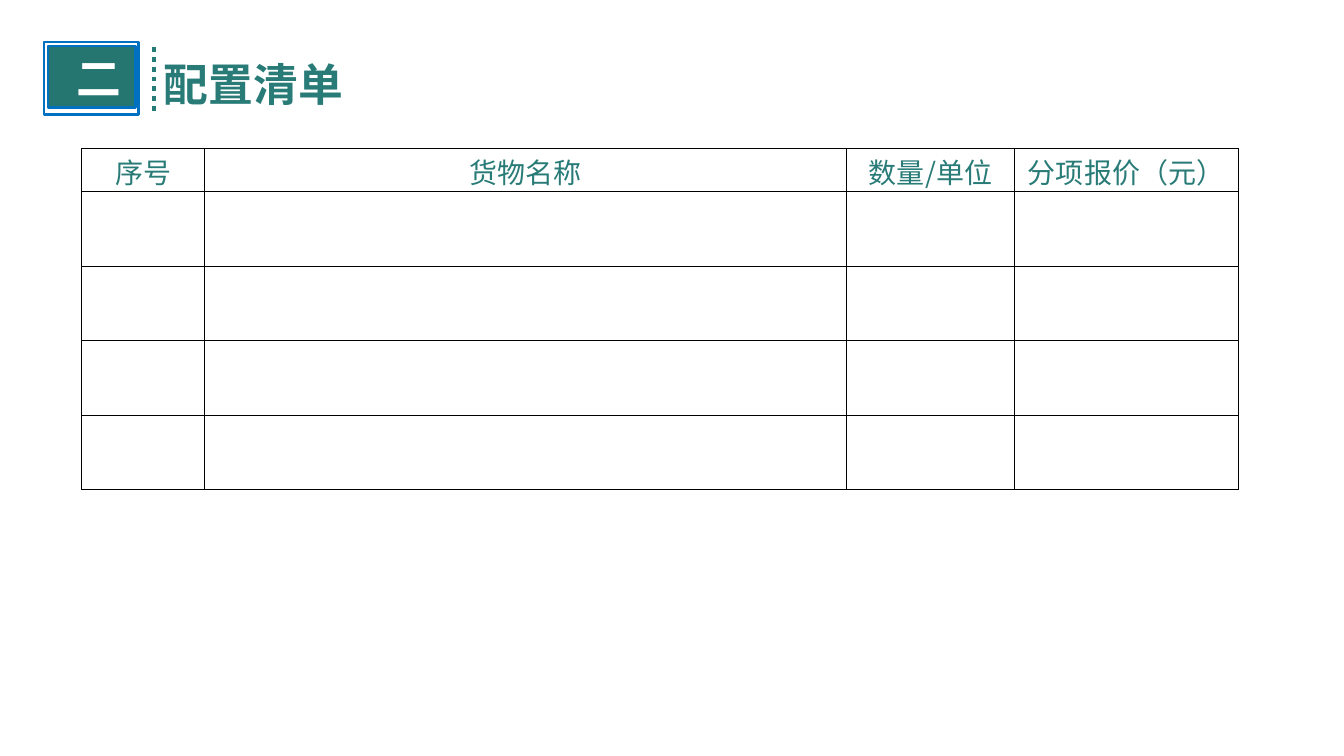
import pptx
import pptx.util
import pptx.dml.color
import pptx.enum.dml
import pptx.enum.shapes
import pptx.enum.text
import pptx.oxml
import pptx.oxml.ns
from lxml import etree

Cm, Pt = pptx.util.Cm, pptx.util.Pt
FONT = "Noto Sans CJK SC"
TEAL, BLUE, WHITE, BLACK = "297B77", "0070C0", "FFFFFF", "000000"
NO_STYLE = "{2D5ABB26-0587-4C30-8999-92F81FD0307C}"


def rgb(value):
    return pptx.dml.color.RGBColor.from_string(value)


def add_child(parent, tag, **attrs):
    return etree.SubElement(parent, pptx.oxml.ns.qn(tag), attrs)


def write(p, text, color, **font):
    r = p.add_run()
    r.text = text
    for name, value in {"name": FONT, **font}.items():
        setattr(r.font, name, value)
    r.font.color.rgb = rgb(color)
    add_child(r.font._element, "a:ea", typeface=FONT)


def add_heading(s, text, color, left, top, width, height):
    tf = s.shapes.add_textbox(Cm(left), Cm(top), Cm(width), Cm(height)).text_frame
    tf.word_wrap = True
    tf.vertical_anchor = pptx.enum.text.MSO_ANCHOR.MIDDLE
    write(tf.paragraphs[0], text, color, size=Pt(32), bold=True)


def add_panel(s, fill, left, top, width, height):
    sp = s.shapes.add_shape(pptx.enum.shapes.MSO_SHAPE.RECTANGLE,
                            Cm(left), Cm(top), Cm(width), Cm(height))
    sp.shadow.inherit = False
    sp.fill.solid()
    sp.fill.fore_color.rgb = rgb(fill)
    sp.line.color.rgb = rgb(BLUE)
    sp.line.width = Pt(2)


def add_title(s, number, title, left, top):
    """Numbered badge, dotted divider and section title."""
    add_panel(s, WHITE, left, top, 2.39, 1.83)
    add_panel(s, "257570", left + 0.1, top + 0.1, 2.21, 1.55)
    add_heading(s, number, WHITE, left + 0.56, top + 0.08, 1.75, 1.63)
    add_heading(s, title, TEAL, left + 2.77, top + 0.23, 11, 1.63)
    x = Cm(left + 2.77)
    divider = s.shapes.add_connector(pptx.enum.shapes.MSO_CONNECTOR.STRAIGHT,
                                     x, Cm(top + 0.13), x, Cm(top + 1.85))
    divider.line.color.rgb = rgb("267B76")
    divider.line.width = Pt(3.5)
    divider.line.dash_style = pptx.enum.dml.MSO_LINE.ROUND_DOT
    add_child(divider._element.spPr, "a:effectLst")


def add_borders(cell):
    tcPr = cell._tc.get_or_add_tcPr()
    for i, side in enumerate(("a:lnL", "a:lnR", "a:lnT", "a:lnB")):
        ln = pptx.oxml.parse_xml(
            f'<{side} {pptx.oxml.ns.nsdecls("a")} w="{Pt(0.5)}"><a:solidFill>'
            f'<a:srgbClr val="{BLACK}"/></a:solidFill></{side}>')
        tcPr.insert(i, ln)


def add_price_table(s, headers, widths, heights, left, top):
    table = s.shapes.add_table(len(heights), len(widths), Cm(left), Cm(top),
                               Cm(sum(widths)), Cm(sum(heights))).table
    table._tbl.tblPr.find(pptx.oxml.ns.qn("a:tableStyleId")).text = NO_STYLE
    table.first_row = table.horz_banding = False
    for column, width in zip(table.columns, widths):
        column.width = Cm(width)
    for row, height in zip(table.rows, heights):
        row.height = Cm(height)
    for cell in table.iter_cells():
        cell.fill.background()
        add_borders(cell)
    for cell, text in zip(table.rows[0].cells, headers):
        for name, value in {"margin_left": 0, "margin_right": 0,
                            "margin_top": Cm(0.06), "margin_bottom": 0}.items():
            setattr(cell, name, value)
        p = cell.text_frame.paragraphs[0]
        p.alignment = pptx.enum.text.PP_ALIGN.CENTER
        write(p, text, TEAL, size=Pt(20))


def main():
    prs = pptx.Presentation()
    prs.slide_width, prs.slide_height = Cm(33.87), Cm(19.05)
    s = prs.slides.add_slide(prs.slide_layouts[6])
    add_title(s, "二", "配置清单", 1.11, 1.06)
    add_price_table(s, ["序号", "货物名称", "数量/单位", "分项报价（元）"],
                    [3.1, 16.18, 4.22, 5.64], [1.08] + [1.88] * 4, 2.06, 3.74)
    prs.save("out.pptx")


if __name__ == "__main__":
    main()
